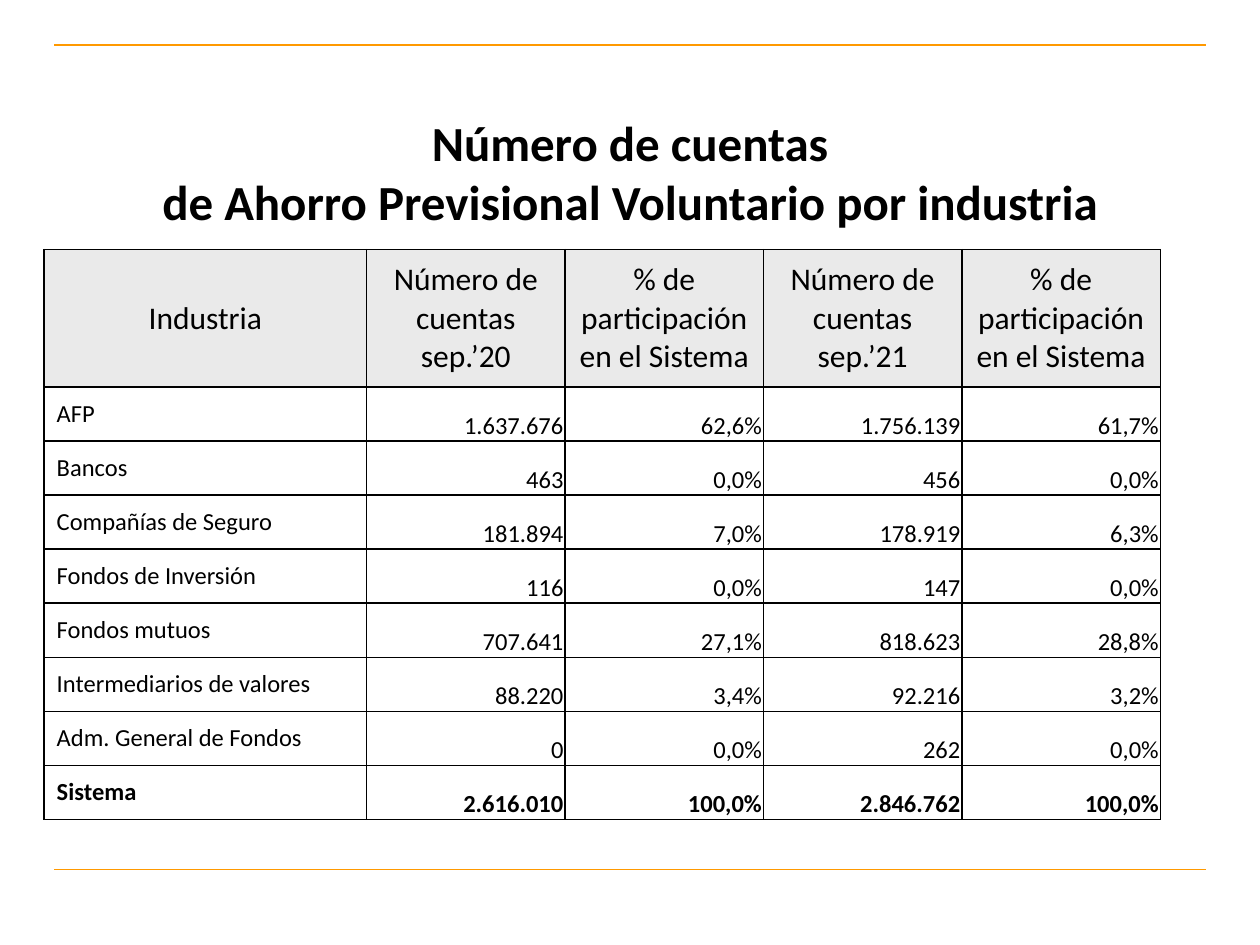
import pptx
import pptx.util
import pptx.dml.color
import pptx.enum.shapes
import pptx.enum.text
import pptx.oxml
import pptx.oxml.ns

Cm = pptx.util.Cm
Pt = pptx.util.Pt
Align = pptx.enum.text.PP_ALIGN
Anchor = pptx.enum.text.MSO_ANCHOR

COLORS = {"rule": "FF9900", "text": "000000", "head": "EAEAEA",
          "body": "FFFFFF", "edge": "000000"}
HEAD = ["Industria", "Número de cuentas\nsep.’20", "% de participación en el Sistema",
        "Número de cuentas\nsep.’21", "% de participación en el Sistema"]
ROWS = [
    ["AFP", "1.637.676", "62,6%", "1.756.139", "61,7%"],
    ["Bancos", "463", "0,0%", "456", "0,0%"],
    ["Compañías de Seguro", "181.894", "7,0%", "178.919", "6,3%"],
    ["Fondos de Inversión", "116", "0,0%", "147", "0,0%"],
    ["Fondos mutuos", "707.641", "27,1%", "818.623", "28,8%"],
    ["Intermediarios de valores", "88.220", "3,4%", "92.216", "3,2%"],
    ["Adm. General de Fondos", "0", "0,0%", "262", "0,0%"],
    ["Sistema", "2.616.010", "100,0%", "2.846.762", "100,0%"],
]
WIDTHS = [6.5] + [4] * 4
HEIGHTS = [2.77] + [1.09] * len(ROWS)


def color(name):
    return pptx.dml.color.RGBColor.from_string(COLORS[name])


def style(frame, size, bold, align):
    for para in frame.paragraphs:
        para.alignment = align
        font = para.font
        font.name = "Calibri"
        font.size = Pt(size)
        font.bold = bold
        font.color.rgb = color("text")


def add_rule(slide, top):
    rule = slide.shapes.add_connector(
        pptx.enum.shapes.MSO_CONNECTOR.STRAIGHT, Cm(1.09), Cm(top), Cm(24.31), Cm(top))
    rule.line.color.rgb = color("rule")
    rule.line.width = Pt(0.75)
    props = rule._element.spPr
    props.append(props.makeelement(pptx.oxml.ns.qn("a:effectLst"), {}))


def set_title(slide, text):
    title = slide.shapes.title
    title.left, title.top = Cm(1.27), Cm(2.51)
    title.width, title.height = Cm(22.86), Cm(2.6)
    frame = title.text_frame
    frame.text = text
    frame.word_wrap = True
    frame.auto_size = pptx.enum.text.MSO_AUTO_SIZE.NONE
    frame.vertical_anchor = Anchor.MIDDLE
    frame.margin_top, frame.margin_bottom = 0, Cm(0.71)
    style(frame, 28, True, Align.CENTER)


def add_edges(cell):
    props = cell._tc.get_or_add_tcPr()
    for spot, side in enumerate(["lnL", "lnR", "lnT", "lnB"]):
        props.insert(spot, pptx.oxml.parse_xml(
            f'<a:{side} {pptx.oxml.ns.nsdecls("a")} w="{Pt(1)}"><a:solidFill>'
            f'<a:srgbClr val="{COLORS["edge"]}"/></a:solidFill></a:{side}>'))


def fill_cell(cell, text, row, col):
    cell.text = text
    cell.fill.solid()
    cell.fill.fore_color.rgb = color("body" if row else "head")
    cell.vertical_anchor = Anchor.MIDDLE
    align = Align.LEFT if row else Align.CENTER
    if row and col:
        cell.vertical_anchor = Anchor.BOTTOM
        cell.margin_left = cell.margin_right = cell.margin_top = Cm(0.03)
        cell.margin_bottom = 0
        align = Align.RIGHT
    style(cell.text_frame, 14 if row else 18, row == len(ROWS), align)
    add_edges(cell)


def add_grid(slide):
    table = slide.shapes.add_table(
        len(HEIGHTS), len(WIDTHS), Cm(0.89), Cm(5.03),
        Cm(sum(WIDTHS)), Cm(sum(HEIGHTS))).table
    table.first_row = table.horz_banding = False
    for col, width in zip(table.columns, WIDTHS):
        col.width = Cm(width)
    for row, height in zip(table.rows, HEIGHTS):
        row.height = Cm(height)
    for row, texts in enumerate([HEAD] + ROWS):
        for col, text in enumerate(texts):
            fill_cell(table.cell(row, col), text, row, col)


def main():
    deck = pptx.Presentation()
    deck.slide_width, deck.slide_height = Cm(25.4), Cm(19.05)
    slide = deck.slides.add_slide(deck.slide_layouts[5])
    for top in (0.91, 17.53):
        add_rule(slide, top)
    set_title(slide, "Número de cuentas\vde Ahorro Previsional Voluntario por industria")
    add_grid(slide)
    deck.save("out.pptx")


if __name__ == "__main__":
    main()
